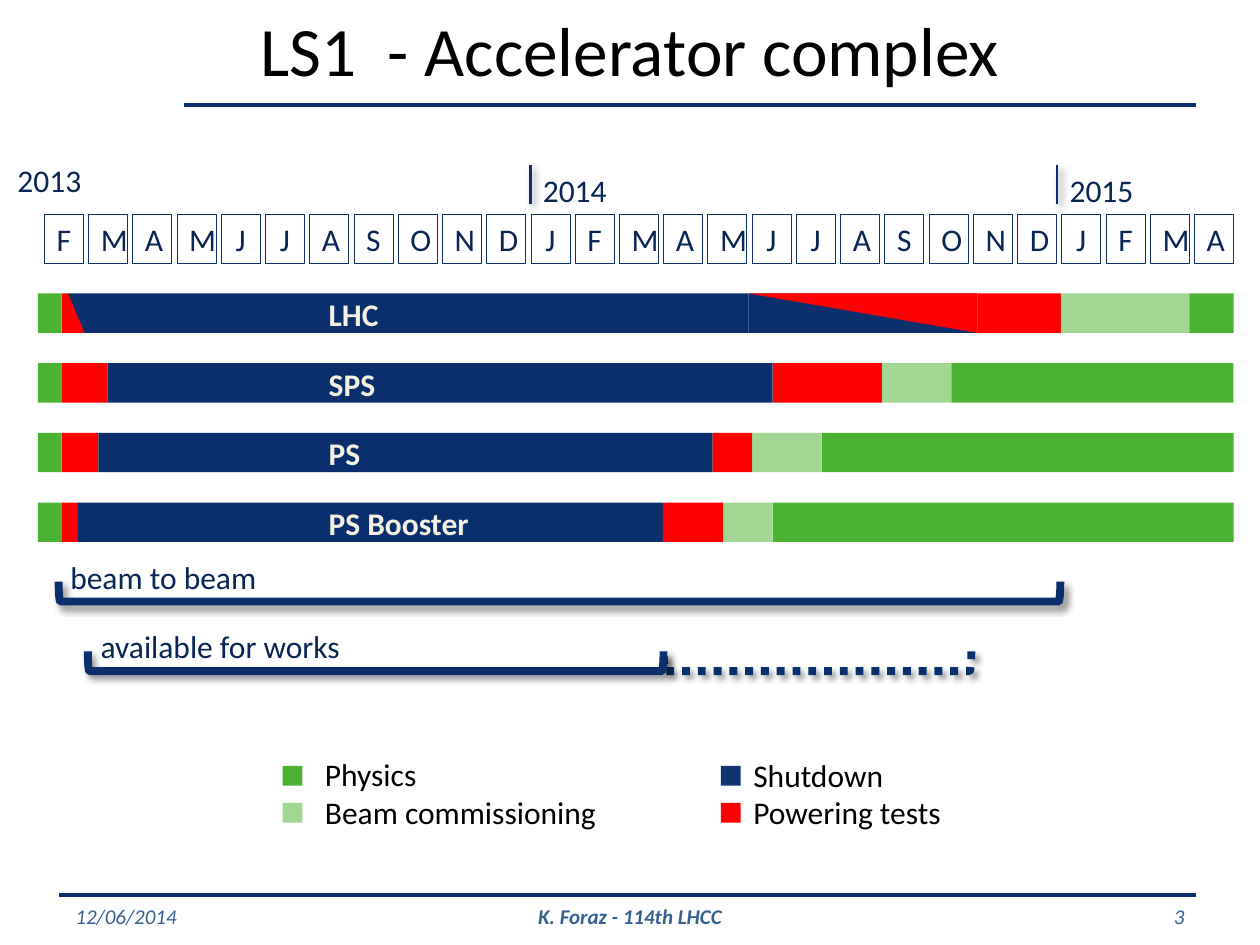
from lxml.etree import SubElement
from pptx import Presentation
from pptx.dml.color import RGBColor
from pptx.enum.dml import MSO_LINE
from pptx.enum.shapes import MSO_CONNECTOR, MSO_SHAPE as SHAPE
from pptx.enum.text import MSO_ANCHOR as ANCHOR, MSO_AUTO_SIZE as AUTO, PP_ALIGN as ALIGN
from pptx.oxml import parse_xml
from pptx.oxml.ns import nsdecls, qn
from pptx.util import Pt

NAVY = RGBColor(0x0A, 0x2F, 0x6C)
INK = RGBColor(0x08, 0x25, 0x54)
GREEN = RGBColor(0x4B, 0xB3, 0x31)
RED = RGBColor(0xFF, 0x00, 0x00)
CREAM = RGBColor(0xF4, 0xF1, 0xE3)
STEEL = RGBColor(0x37, 0x60, 0x92)
WHITE = RGBColor(0xFF, 0xFF, 0xFF)
BLACK = RGBColor(0x00, 0x00, 0x00)

# Phase: colour and opacity in percent
PHYSICS, COMMISSIONING = (GREEN, 100), (GREEN, 52)
SHUTDOWN, POWERING = (NAVY, 100), (RED, 100)
LEGEND_SHUTDOWN = (NAVY, 97)

MONTHS = "FMAMJJASONDJFMAMJJASONDJFMA"
MONTH_X, MONTH_STEP = 25.2, 25.28
BAR_X, BAR_Y, BAR_STEP, BAR_H = 21.6, 167.7, 39.84, 22.5
BAR_END = 704.9

# Machine: label width, then phases in order, each with the x where it ends
MACHINES = {
    "LHC": (51.8, [(PHYSICS, 35.3), (POWERING, 38.9), (SHUTDOWN, 427.7),
                   (SHUTDOWN, 558.5), (POWERING, 606.2),
                   (COMMISSIONING, 679.7), (PHYSICS, BAR_END)]),
    "SPS": (51.1, [(PHYSICS, 35.3), (POWERING, 61.6), (SHUTDOWN, 441.6),
                   (POWERING, 504), (COMMISSIONING, 543.6), (PHYSICS, BAR_END)]),
    "PS": (38.9, [(PHYSICS, 35.3), (POWERING, 56.2), (SHUTDOWN, 407.2),
                  (POWERING, 429.8), (COMMISSIONING, 469.6), (PHYSICS, BAR_END)]),
    "PS Booster": (112.3, [(PHYSICS, 35.3), (POWERING, 44.6), (SHUTDOWN, 378.8),
                           (POWERING, 413.2), (COMMISSIONING, 441.6),
                           (PHYSICS, BAR_END)]),
}


class Builder:
    font = "Calibri"

    def __init__(self, slide):
        self.slide = slide

    def set_text(self, tf, lines, size=18, color=INK, align=ALIGN.LEFT,
                 bold=False, italic=False):
        tf.text = "\n".join(lines)
        for p in tf.paragraphs:
            p.alignment = align
            p.font.name, p.font.size = self.font, Pt(size)
            p.font.bold, p.font.italic = bold, italic
            p.font.color.rgb = color

    def title(self, text, x, y, w, h):
        sp = self.slide.shapes.title
        sp.left, sp.top, sp.width, sp.height = Pt(x), Pt(y), Pt(w), Pt(h)
        tf = sp.text_frame
        tf.auto_size, tf.vertical_anchor = AUTO.NONE, ANCHOR.MIDDLE
        self.set_text(tf, [text], 39.6, BLACK, ALIGN.CENTER)

    def text(self, lines, x, y, w, h=29.1, wrap=False, anchor=ANCHOR.TOP, **style):
        sp = self.slide.shapes.add_textbox(Pt(x), Pt(y), Pt(w), Pt(h))
        tf = sp.text_frame
        tf.word_wrap, tf.vertical_anchor = wrap, anchor
        self.set_text(tf, lines, **style)
        return sp

    def outline(self, sp):
        """Put a thin translucent outline around the letters."""
        for p in sp.text_frame.paragraphs:
            p._p.pPr.find(qn("a:defRPr")).insert(0, parse_xml(
                f'<a:ln {nsdecls("a")} w="12700"><a:solidFill><a:srgbClr val="054697">'
                '<a:alpha val="66000"/></a:srgbClr></a:solidFill></a:ln>'))

    def shape(self, kind, x, y, w, h, phase=None):
        sp = self.slide.shapes.add_shape(kind, Pt(x), Pt(y), Pt(w), Pt(h))
        sp.shadow.inherit = False
        sp.line.fill.background()
        if phase is None:
            sp.fill.background()
            return sp
        color, opacity = phase
        sp.fill.solid()
        sp.fill.fore_color.rgb = color
        if opacity < 100:
            clr = sp._element.spPr.find(qn("a:solidFill")).find(qn("a:srgbClr"))
            SubElement(clr, qn("a:alpha"), val=str(opacity * 1000))
        return sp

    def month(self, letter, x):
        sp = self.shape(SHAPE.RECTANGLE, x, 122.4, 22.3, 28.3, (WHITE, 100))
        sp.line.color.rgb, sp.line.width = NAVY, Pt(0.25)
        sp.text_frame.vertical_anchor = ANCHOR.MIDDLE
        self.set_text(sp.text_frame, [letter], align=ALIGN.CENTER)

    def drop_shadow(self, effects, opacity):
        effects.append(parse_xml(
            f'<a:outerShdw {nsdecls("a")} blurRad="50800" dist="38100" dir="2700000">'
            f'<a:srgbClr val="000000"><a:alpha val="{opacity * 1000}"/></a:srgbClr>'
            '</a:outerShdw>'))

    def line(self, x1, y1, x2, y2, width, shadow=False):
        c = self.slide.shapes.add_connector(
            MSO_CONNECTOR.STRAIGHT, Pt(x1), Pt(y1), Pt(x2), Pt(y2))
        c.line.color.rgb, c.line.width = NAVY, Pt(width)
        effects = SubElement(c._element.spPr, qn("a:effectLst"))
        if shadow:
            self.drop_shadow(effects, 40)

    def bracket(self, x1, x2, y, dash=None):
        """Draw a bracket that opens upwards and spans x1 to x2."""
        depth, length = 11.3, x2 - x1
        sp = self.shape(SHAPE.LEFT_BRACKET, (x1 + x2 - depth) / 2,
                        y + (depth - length) / 2, depth, length)
        sp.rotation = 270
        sp.line.color.rgb, sp.line.width = NAVY, Pt(4.5)
        if dash:
            sp.line.dash_style = dash
        self.drop_shadow(sp._element.spPr.find(qn("a:effectLst")), 43)

    def machine_bar(self, phases, y):
        x = BAR_X
        for phase, end in phases:
            self.shape(SHAPE.RECTANGLE, x, y, end - x, BAR_H, phase)
            x = end


def main():
    prs = Presentation()
    prs.slide_width, prs.slide_height = Pt(720), Pt(540)
    b = Builder(prs.slides.add_slide(prs.slide_layouts[5]))

    b.line(105.1, 60.2, 683.3, 60.2, 2.25)
    b.line(33.8, 511.2, 683.3, 511.2, 2.25)
    b.title("LS1  - Accelerator complex", 36, 5, 648, 45.4)

    for i, letter in enumerate(MONTHS):
        b.month(letter, MONTH_X + i * MONTH_STEP)
    for year, x, y in (("2013", 2.9, 88.6), ("2014", 303.1, 94.3), ("2015", 604.1, 94.3)):
        b.text([year], x, y, 51.1)
    for x in (303.1, 604.1):
        b.line(x, 94.3, x, 116.6, 1.5, shadow=True)

    for i, (name, (label_w, phases)) in enumerate(MACHINES.items()):
        y = BAR_Y + i * BAR_STEP
        b.machine_bar(phases, y)
        if name == "LHC":
            b.shape(SHAPE.RIGHT_TRIANGLE, 38.9, y, 9.4, BAR_H, POWERING)
            ramp = b.shape(SHAPE.RIGHT_TRIANGLE, 427.7, y, 130.8, BAR_H, POWERING)
            ramp.rotation = 180
        b.outline(b.text([name], 180.7, y - 2.8, label_w, color=CREAM, bold=True))

    b.bracket(33.5, 605.9, 332.4)
    b.text(["beam to beam"], 33.1, 315.4, 122.4)
    b.bracket(379.4, 555.1, 372.2, MSO_LINE.ROUND_DOT)
    b.bracket(50.2, 379.2, 372.2)
    b.text(["available for works"], 50.4, 355, 152.6)

    b.text(["Physics", "Beam commissioning"], 178.6, 427.9, 171.4, 50.9, color=BLACK)
    b.text(["Shutdown", "Powering tests"], 423.4, 428.3, 155.5, 50.9, True, color=BLACK)
    for x, column in ((161.5, (PHYSICS, COMMISSIONING)),
                      (412, (LEGEND_SHUTDOWN, POWERING))):
        for i, phase in enumerate(column):
            b.shape(SHAPE.RECTANGLE, x, 437.6 + 21.2 * i, 11.3, 11.3, phase)

    for text, x, w, align, bold in (
            ("12/06/2014", 36, 168, ALIGN.LEFT, False),
            ("K. Foraz - 114th LHCC", 246, 228, ALIGN.CENTER, True),
            ("3", 516, 168, ALIGN.RIGHT, False)):
        b.text([text], x, 509.2, w, 28.8, True, ANCHOR.MIDDLE, size=12,
               color=STEEL, align=align, bold=bold, italic=True)

    prs.save("out.pptx")


if __name__ == "__main__":
    main()
